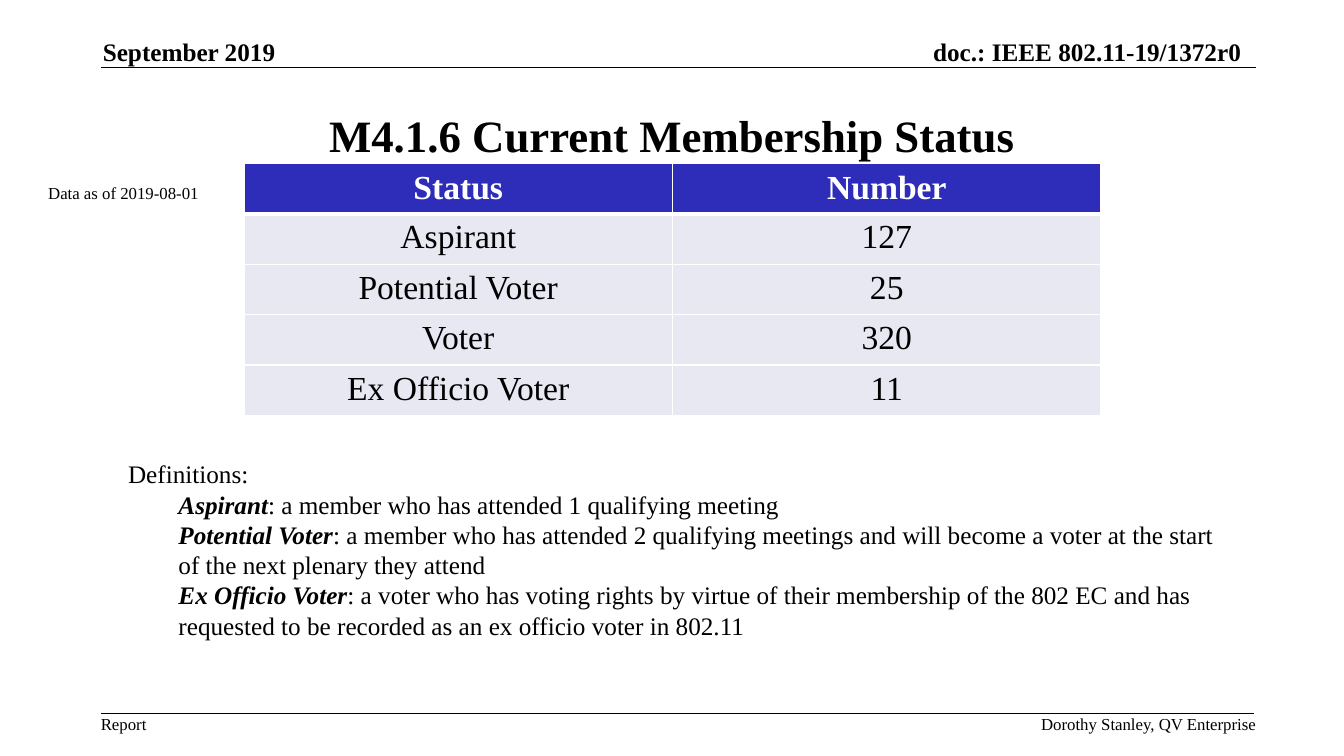
from lxml.etree import SubElement
from pptx import Presentation
from pptx.dml.color import RGBColor
from pptx.enum.shapes import MSO_CONNECTOR
from pptx.enum.text import MSO_ANCHOR, MSO_AUTO_SIZE, PP_ALIGN
from pptx.oxml.ns import qn
from pptx.util import Inches, Pt

BLACK = RGBColor(0x00, 0x00, 0x00)
WHITE = RGBColor(0xFF, 0xFF, 0xFF)
HEADER_BLUE = RGBColor(0x2D, 0x2D, 0xB9)
ROW_LAVENDER = RGBColor(0xE8, 0xE8, 0xF3)

MEMBERSHIP = [
    ("Status", "Number"),
    ("Aspirant", "127"),
    ("Potential Voter", "25"),
    ("Voter", "320"),
    ("Ex Officio Voter", "11"),
]

DEFINITIONS = [
    ("Aspirant", ": a member who has attended 1 qualifying meeting"),
    ("Potential Voter", ": a member who has attended 2 qualifying meetings and will "
     "become a voter at the start of the next plenary they attend"),
    ("Ex Officio Voter", ": a voter who has voting rights by virtue of their membership "
     "of the 802 EC and has requested to be recorded as an ex officio voter in 802.11"),
]


class ReportSlide:
    font_name = "Times New Roman"

    def __init__(self, presentation):
        self.slide = presentation.slides.add_slide(presentation.slide_layouts[1])

    def place(self, shape, left, top, width, height):
        shape.left, shape.top = Inches(left), Inches(top)
        shape.width, shape.height = Inches(width), Inches(height)

    def style(self, paragraph, size, bold=None, color=BLACK, align=PP_ALIGN.LEFT):
        paragraph.alignment = align
        paragraph.font.name = self.font_name
        paragraph.font.size = Pt(size)
        paragraph.font.bold = bold
        paragraph.font.color.rgb = color

    def title(self, text, *box):
        heading = self.slide.shapes.title
        self.place(heading, *box)
        heading.text_frame.text = text
        heading.text_frame.vertical_anchor = MSO_ANCHOR.MIDDLE
        self.style(heading.text_frame.paragraphs[0], 32, True, align=PP_ALIGN.CENTER)

    def label(self, text, *box, size=12, bold=False, align=PP_ALIGN.LEFT,
              anchor=MSO_ANCHOR.TOP, margin=0):
        frame = self.slide.shapes.add_textbox(*map(Inches, box)).text_frame
        frame.word_wrap = True
        frame.vertical_anchor = anchor
        frame.margin_left = frame.margin_right = Inches(margin)
        frame.margin_top = frame.margin_bottom = Inches(margin / 2)
        frame.text = text
        self.style(frame.paragraphs[0], size, bold, align=align)

    def rule(self, left, right, y):
        rule = self.slide.shapes.add_connector(
            MSO_CONNECTOR.STRAIGHT, Inches(left), Inches(y), Inches(right), Inches(y))
        rule.line.color.rgb = BLACK
        rule.line.width = Pt(1)
        SubElement(rule._element.spPr, qn("a:effectLst"))

    def border(self, cell, side, width):
        properties = cell._tc.get_or_add_tcPr()
        edge = SubElement(properties, qn(f"a:ln{side}"), w=str(Pt(width)))
        SubElement(SubElement(edge, qn("a:solidFill")), qn("a:srgbClr"), val=str(WHITE))

    def table(self, rows, *box):
        grid = self.slide.shapes.add_table(
            len(rows), len(rows[0]), *map(Inches, box)).table
        for r, row in enumerate(rows):
            header = r == 0
            for c, text in enumerate(row):
                cell = grid.cell(r, c)
                cell.text = text
                for side in "LRTB":
                    heavy = (header and side == "B") or (r == 1 and side == "T")
                    self.border(cell, side, 3 if heavy else 1)
                cell.fill.solid()
                cell.fill.fore_color.rgb = HEADER_BLUE if header else ROW_LAVENDER
                cell.vertical_anchor = MSO_ANCHOR.MIDDLE if header else MSO_ANCHOR.TOP
                self.style(cell.text_frame.paragraphs[0], 24, header,
                           WHITE if header else BLACK, PP_ALIGN.CENTER)

    def definitions(self, lead, entries, *box):
        body = self.slide.placeholders[1]
        self.place(body, *box)
        frame = body.text_frame
        frame.auto_size = MSO_AUTO_SIZE.SHAPE_TO_FIT_TEXT
        frame.text = lead
        for term, meaning in entries:
            entry = frame.add_paragraph()
            entry.level = 1
            term_run = entry.add_run()
            term_run.text = term
            term_run.font.bold = term_run.font.italic = True
            entry.add_run().text = meaning
        for paragraph in frame.paragraphs:
            self.style(paragraph, 18)
            paragraph.space_before = Pt(0)
            properties = paragraph._p.get_or_add_pPr()
            properties.set("marL", str(Inches(0.5 * paragraph.level)))
            properties.set("indent", "0")
            bullet = properties.makeelement(qn("a:buNone"), {})
            properties.find(qn("a:spcBef")).addnext(bullet)


def main():
    presentation = Presentation()
    presentation.slide_width, presentation.slide_height = Inches(13.33), Inches(7.5)
    report = ReportSlide(presentation)

    report.label("doc.: IEEE 802.11-19/1372r0", 8.31, 0.36, 4, 0.3, size=18,
                 bold=True, align=PP_ALIGN.RIGHT, anchor=MSO_ANCHOR.BOTTOM)
    report.label("September 2019", 1.02, 0.36, 2.5, 0.3, size=18,
                 bold=True, anchor=MSO_ANCHOR.BOTTOM)
    report.rule(1, 12.46, 0.67)
    report.rule(1, 12.44, 7.08)
    report.label("Report", 1, 7.08, 1, 0.2)
    report.label("Dorothy Stanley, QV Enterprise", 9.46, 7.08, 3, 0.2,
                 align=PP_ALIGN.RIGHT)

    report.title("M4.1.6 Current Membership Status", 1, 0.75, 11.33, 1.17)
    report.label("Data as of 2019-08-01", 0.38, 1.76, 2.66, 0.3, margin=0.1)
    report.table(MEMBERSHIP, 2.42, 1.62, 8.5, 2.5)
    report.definitions("Definitions:", DEFINITIONS, 1.17, 4.5, 11.17, 1.92)
    presentation.save("out.pptx")


if __name__ == "__main__":
    main()
